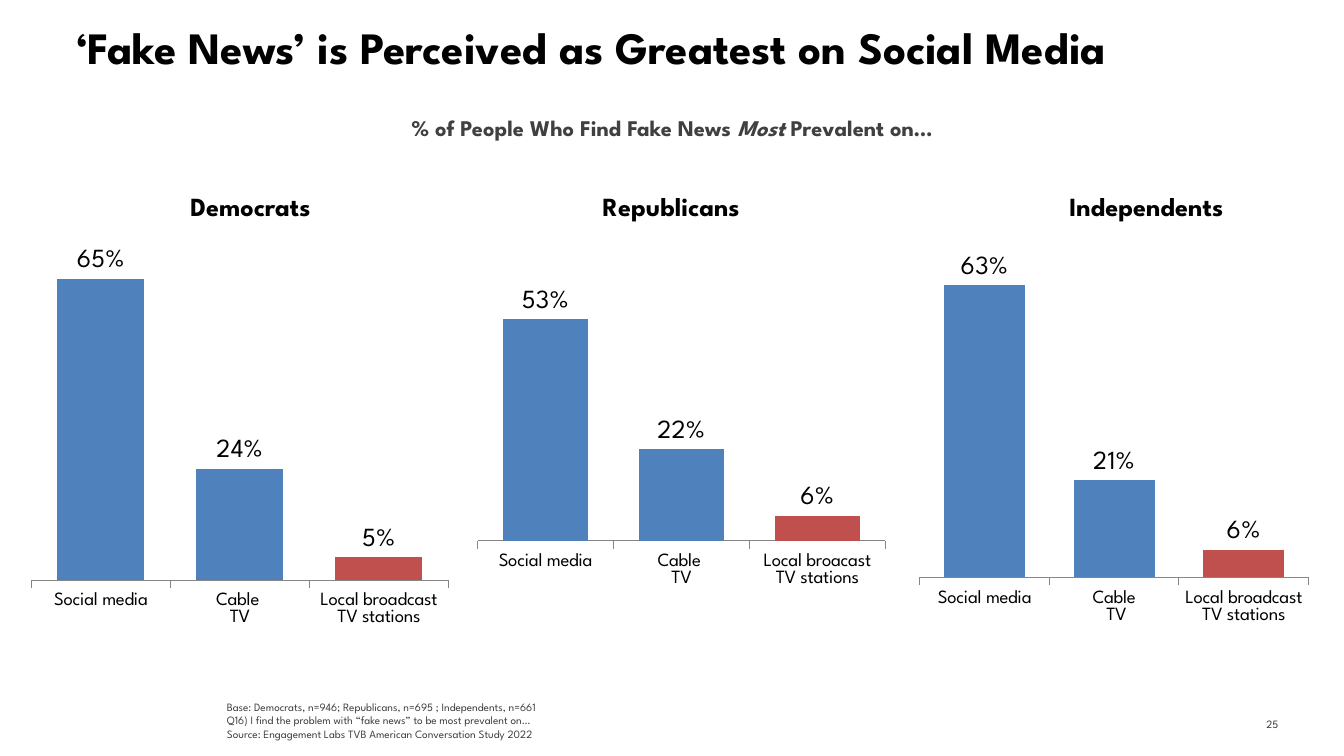
from pptx import Presentation
from pptx import util as u
from pptx.chart import data as chart_data
from pptx.dml.color import RGBColor
from pptx.enum import chart as charts, text
from pptx.oxml import parse_xml
from pptx.oxml.ns import nsdecls

BLACK = RGBColor(0x00, 0x00, 0x00)
GREY = RGBColor(0x40, 0x40, 0x40)
NUMBER_GREY = RGBColor(0x3C, 0x3C, 0x3A)
AXIS_GREY = RGBColor(0x86, 0x86, 0x86)
BLUE = RGBColor(0x4F, 0x81, 0xBD)
RED = RGBColor(0xC0, 0x50, 0x4D)
FONT = "League Spartan"

PANELS = [
    {"heading": "Democrats", "heading_box": (1.13, 1.37, 1.47, 0.34),
     "box": (0.23, 1.5, 3.11, 3.66), "values": (0.65, 0.24, 0.05),
     "cable": "Cable \nTV", "local": "Local broadcast TV stations",
     "maximum": 0.7, "top": 0.11, "bottom": 0.77},
    {"heading": "Republicans", "heading_box": (4.26, 1.37, 1.47, 0.34),
     "box": (3.55, 1.5, 3.04, 3.66), "values": (0.53, 0.22, 0.06),
     "cable": "Cable \nTV", "local": "Local broacast TV stations",
     "maximum": 0.6, "top": 0.18, "bottom": 0.69},
    {"heading": "Independents", "heading_box": (7.74, 1.37, 1.58, 0.34),
     "box": (6.84, 1.48, 2.9, 3.66), "values": (0.63, 0.21, 0.06),
     "cable": "Cable\n TV", "local": "Local broadcast TV stations",
     "maximum": 0.7, "top": 0.11, "bottom": 0.77},
]


def set_values(target, values):
    for name, value in values.items():
        setattr(target, name, value)


def set_font(font, size, color=BLACK, **values):
    set_values(font, {"name": FONT, "size": u.Pt(size), **values})
    font.color.rgb = color


def add_text(page, box, paras, size, color=BLACK, bold=False,
             align=text.PP_ALIGN.LEFT, **frame_values):
    frame = page.shapes.add_textbox(*map(u.Inches, box)).text_frame
    set_values(frame, {"word_wrap": True, **frame_values})
    for index, spans in enumerate(paras):
        para = frame.paragraphs[0] if index == 0 else frame.add_paragraph()
        para.alignment = align
        for words, italic in spans:
            for number, line in enumerate(words.split("\n")):
                if number:
                    para.add_line_break()
                span = para.add_run()
                span.text = line
                set_font(span.font, size, color, bold=bold, italic=italic)


def add_header(page, box):
    left, top, width, height = box
    add_text(page, (left, top, width, 0.55),
             [[("‘Fake News’ is Perceived as Greatest on Social Media", False)]],
             24, bold=True, margin_top=0)
    add_text(page, (left + 2.26, top + 0.65, 4.54, height - 0.65),
             [[("% of People Who Find Fake News ", False), ("Most", True),
               (" Prevalent on…", False)]],
             12, GREY, True, text.PP_ALIGN.CENTER, word_wrap=False)


def set_plot_area(chart, top, bottom):
    edges = {"x": 0, "y": top, "w": 1, "h": round(bottom - top, 2)}
    parts = "".join(f'<c:{name} val="{value}"/>' for name, value in edges.items())
    layout = parse_xml(
        f'<c:layout {nsdecls("c")}><c:manualLayout><c:layoutTarget val="inner"/>'
        f'<c:xMode val="edge"/><c:yMode val="edge"/>{parts}'
        f'</c:manualLayout></c:layout>')
    area = chart.plots[0]._element.getparent()
    for old in area.findall(layout.tag):
        area.remove(old)
    area.insert(0, layout)


def add_panel(page, box, heading, heading_box, values, cable, local,
              maximum, top, bottom):
    data = chart_data.CategoryChartData(number_format="#,##0%")
    data.categories = ["Social media", cable, local]
    data.add_series("Series 1", values)
    chart = page.shapes.add_chart(charts.XL_CHART_TYPE.COLUMN_CLUSTERED,
                                  *map(u.Inches, box), data).chart
    set_values(chart, {"has_legend": False, "has_title": False})
    set_font(chart.font, 18)
    set_plot_area(chart, top, bottom)

    set_values(chart.value_axis, {
        "minimum_scale": 0, "maximum_scale": maximum,
        "has_major_gridlines": False, "visible": False})
    axis = chart.category_axis
    axis.major_tick_mark = charts.XL_TICK_MARK.OUTSIDE
    axis.format.line.color.rgb = AXIS_GREY
    axis.format.line.width = u.Pt(0.5)
    set_font(axis.tick_labels.font, 10)

    plot = chart.plots[0]
    set_values(plot, {"gap_width": 60, "vary_by_categories": False})
    series = plot.series[0]
    series.format.fill.solid()
    series.format.fill.fore_color.rgb = RED
    for index in range(2):
        fill = series.points[index].format.fill
        fill.solid()
        fill.fore_color.rgb = BLUE
    labels = series.data_labels
    set_values(labels, {
        "show_value": True, "number_format": "#,##0%",
        "number_format_is_linked": False,
        "position": charts.XL_LABEL_POSITION.OUTSIDE_END})
    set_font(labels.font, 14)

    add_text(page, heading_box, [[(heading, False)]], 14, bold=True,
             align=text.PP_ALIGN.CENTER)


def add_footer(page, box):
    left, top, width, height = box
    notes = ["Base: Democrats, n=946; Republicans, n=695 ; Independents, n=661\n"
             "Q16) I find the problem with “fake news” to be most prevalent on…",
             "Source: Engagement Labs TVB American Conversation Study 2022"]
    add_text(page, (left, top, 7.53, height), [[(note, False)] for note in notes],
             6, GREY, vertical_anchor=text.MSO_ANCHOR.BOTTOM)
    add_text(page, (left + width - 0.59, top + 0.08, 0.57, 0.3), [[("25", False)]],
             6, NUMBER_GREY, align=text.PP_ALIGN.RIGHT,
             vertical_anchor=text.MSO_ANCHOR.MIDDLE)


def main():
    deck = Presentation()
    width = u.Inches(10)
    set_values(deck, {"slide_width": width, "slide_height": width * 9 // 16})
    page = deck.slides.add_slide(deck.slide_layouts[6])
    add_header(page, (0.47, 0.15, 9.26, 0.95))
    for panel in PANELS:
        add_panel(page, **panel)
    add_footer(page, (1.59, 5.16, 8.04, 0.4))
    deck.save("out.pptx")


if __name__ == "__main__":
    main()
